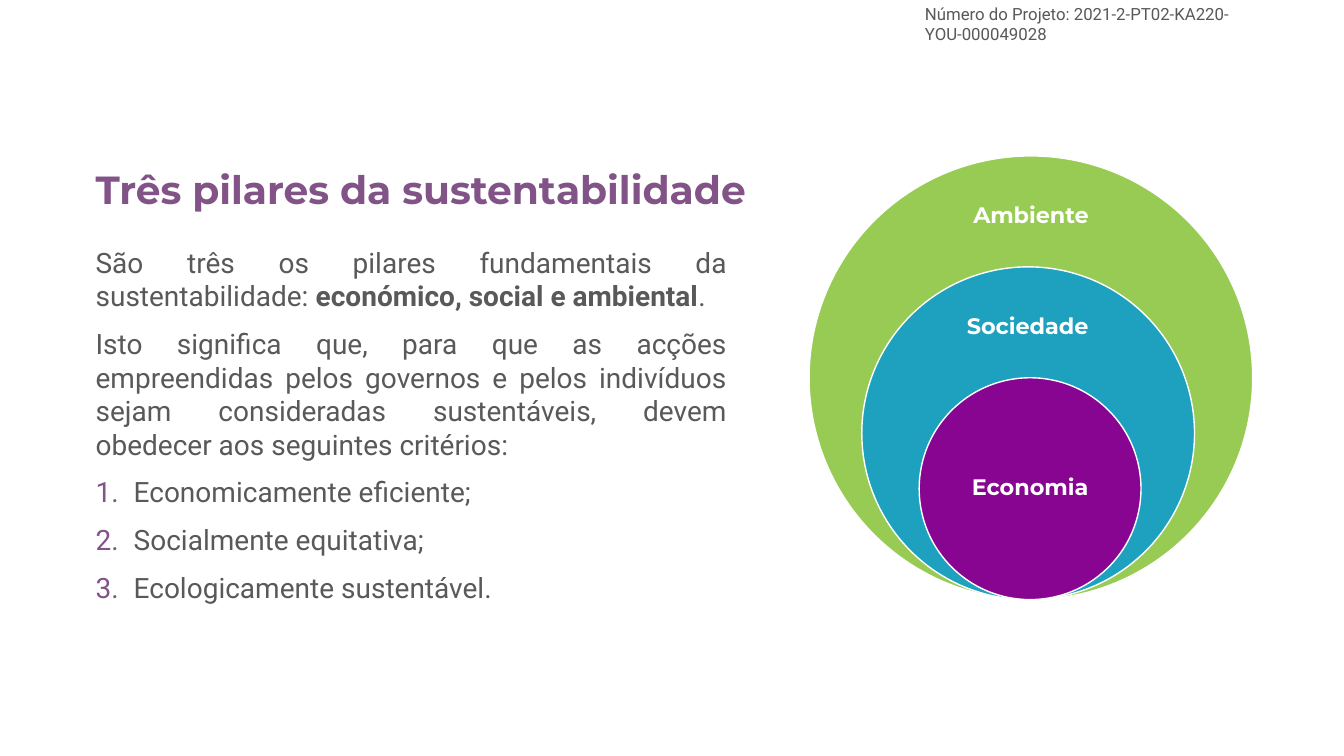
from lxml import etree
from pptx import Presentation
from pptx import util as u
from pptx.dml.color import RGBColor
from pptx.enum import shapes, text
from pptx.oxml.ns import qn

COLORS = {
    "grey": "595959", "violet": "815387", "white": "FFFFFF",
    "green": "98CB54", "blue": "1DA1BE", "purple": "880592",
}
DEFAULT_INSETS = (0.25, 0.13, 0.25, 0.13)
INNER_DIAMETER = 5.59
RINGS_BOTTOM = 15.11

# Diameter factor, centre x, fill, label, label box, label insets
RINGS = [
    (2, 25.98, "green", "Ambiente", (24.03, 4.5, 3.91, 1.68), (0, 0.51, 0, 0.3)),
    (1.5, 25.91, "blue", "Sociedade", (23.98, 7.26, 3.91, 1.57), (0.23, 0.71, 0.3, 0.3)),
    (1, 25.96, "purple", "Economia", (23.98, 10.9, 3.96, 2.79), (0.3, 0.3, 0.3, 0.3)),
]
INTRO = [
    ["São três os pilares fundamentais da sustentabilidade: ",
     "económico, social e ambiental", "."],
    ["Isto significa que, para que as acções empreendidas pelos governos e pelos "
     "indivíduos sejam consideradas sustentáveis, devem obedecer aos seguintes critérios:"],
]
CRITERIA = ["Economicamente eficiente;", "Socialmente equitativa;", "Ecologicamente sustentável."]


def rgb(name):
    return RGBColor.from_string(COLORS[name])


def style(font, name, size, color, bold=False):
    font.name, font.size, font.bold = name, u.Pt(size), bold
    font.color.rgb = rgb(color)


def add_box(slide, box, anchor=text.MSO_ANCHOR.TOP, insets=DEFAULT_INSETS):
    tf = slide.shapes.add_textbox(*map(u.Cm, box)).text_frame
    tf.word_wrap = True
    tf.vertical_anchor = anchor
    tf.margin_left, tf.margin_top, tf.margin_right, tf.margin_bottom = map(u.Cm, insets)
    return tf


def add_line(slide, box, words, font, line_spacing=None, align=None, **options):
    tf = add_box(slide, box, **options)
    p = tf.paragraphs[0]
    p.text = words
    p.line_spacing, p.alignment = line_spacing, align
    style(p.runs[0].font, *font)


def add_number(p, color):
    pPr = p._p.get_or_add_pPr()
    indent = u.Cm(0.96)
    pPr.set("marL", str(indent))
    pPr.set("indent", str(-indent))
    bullet_color = etree.SubElement(pPr, qn("a:buClr"))
    etree.SubElement(bullet_color, qn("a:srgbClr"), val=COLORS[color])
    etree.SubElement(pPr, qn("a:buFont"), typeface="+mj-lt")
    etree.SubElement(pPr, qn("a:buAutoNum"), type="arabicPeriod")


def add_body(slide, box):
    tf = add_box(slide, box)
    paragraphs = INTRO + [[criterion] for criterion in CRITERIA]
    for i, parts in enumerate(paragraphs):
        p = tf.add_paragraph() if i else tf.paragraphs[0]
        p.alignment = text.PP_ALIGN.JUSTIFY
        if i:
            p.space_before = u.Pt(10)
        if i >= len(INTRO):
            add_number(p, "violet")
        for j, part in enumerate(parts):
            r = p.add_run()
            r.text = part
            style(r.font, "Roboto", 20, "grey", bold=j == 1)


def add_ring(slide, factor, center, fill):
    d = INNER_DIAMETER * factor
    sp = slide.shapes.add_shape(
        shapes.MSO_SHAPE.OVAL,
        u.Cm(center - d / 2), u.Cm(RINGS_BOTTOM - d), u.Cm(d), u.Cm(d))
    sp.shadow.inherit = False
    sp.fill.solid()
    sp.fill.fore_color.rgb = rgb(fill)
    sp.line.color.rgb = rgb("white")
    sp.line.width = u.Pt(1)


def main():
    prs = Presentation()
    prs.slide_width, prs.slide_height = u.Cm(33.87), u.Cm(19.05)
    slide = prs.slides.add_slide(prs.slide_layouts[6])

    # Project number
    add_line(slide, (23.06, 0.23, 10.82, 0.76),
             "Número do Projeto: 2021-2-PT02-KA220-YOU-000049028",
             ("Roboto", 12, "grey"), anchor=text.MSO_ANCHOR.MIDDLE)

    # Title and body
    add_line(slide, (2.16, 4.17, 17.93, 0.99), "Três pilares da sustentabilidade",
             ("Montserrat", 28, "violet", True), line_spacing=0.9)
    add_body(slide, (2.16, 6.05, 16.41, 8.18))

    # Nested pillars
    for factor, center, fill, label, box, insets in RINGS:
        add_ring(slide, factor, center, fill)
        add_line(slide, box, label, ("Montserrat", 16, "white", True), line_spacing=0.9,
                 align=text.PP_ALIGN.CENTER, anchor=text.MSO_ANCHOR.MIDDLE, insets=insets)

    prs.save("out.pptx")


if __name__ == "__main__":
    main()
